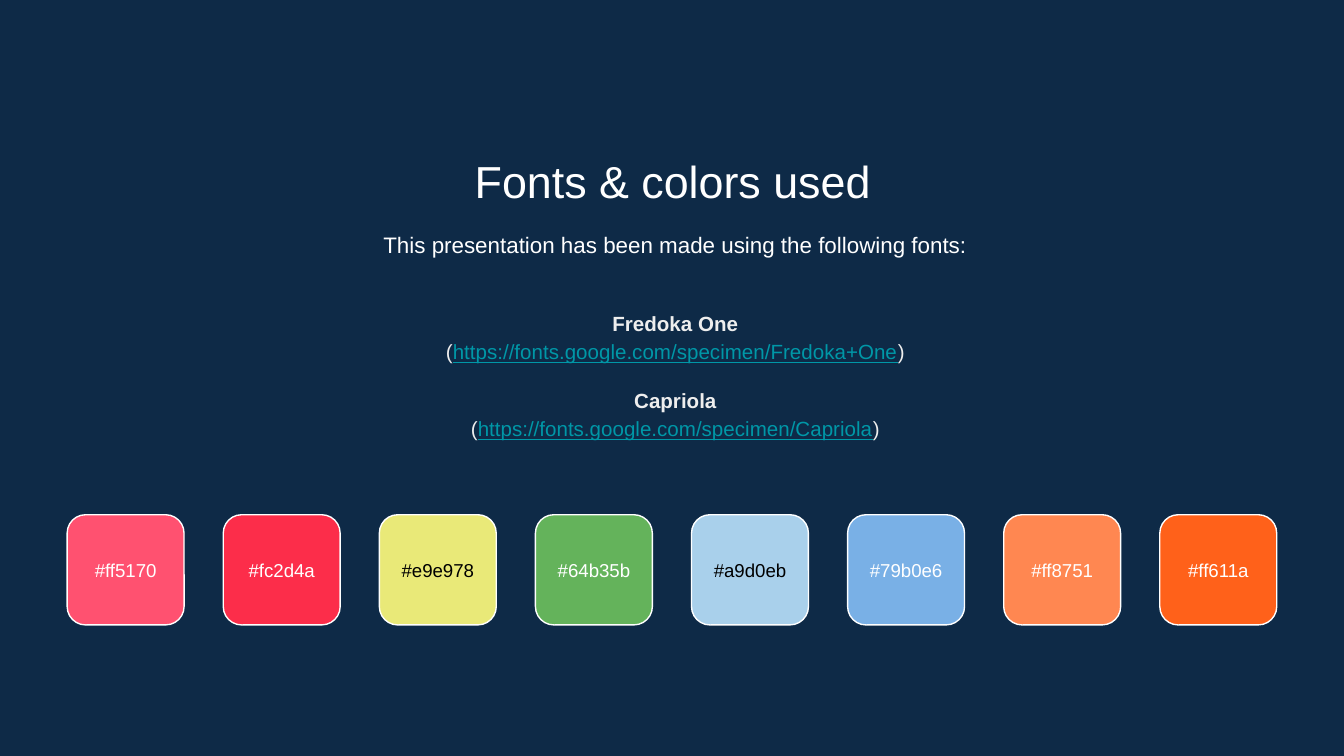
from dataclasses import dataclass

from pptx import Presentation
from pptx.dml.color import RGBColor
from pptx.enum.shapes import MSO_SHAPE
from pptx.enum.text import MSO_ANCHOR, PP_ALIGN
from pptx.util import Inches, Pt


@dataclass(frozen=True)
class Theme:
    font: str = "Arial"
    background: str = "0E2A47"
    white: str = "FFFFFF"
    black: str = "000000"
    soft_white: str = "EEEEEE"
    link: str = "0097A7"
    title_size: float = 24
    intro_size: float = 12
    body_size: float = 11
    label_size: float = 10


THEME = Theme()
FONTS = [
    ("Fredoka One", "https://fonts.google.com/specimen/Fredoka+One"),
    ("Capriola", "https://fonts.google.com/specimen/Capriola"),
]
# Swatch colour and the colour of its label
SWATCHES = [
    ("ff5170", THEME.white),
    ("fc2d4a", THEME.white),
    ("e9e978", THEME.black),
    ("64b35b", THEME.white),
    ("a9d0eb", THEME.black),
    ("79b0e6", THEME.white),
    ("ff8751", THEME.white),
    ("ff611a", THEME.white),
]
SLIDE_WIDTH, MARGIN = 10, 0.5
SWATCH_TOP, SWATCH_WIDTH, SWATCH_HEIGHT = 3.83, 0.87, 0.82
# Equal steps from the left margin to the right one
SWATCH_PITCH = (SLIDE_WIDTH - 2 * MARGIN - SWATCH_WIDTH) / (len(SWATCHES) - 1)
LABEL_TOP, LABEL_HEIGHT = 4, 0.48


def color(value):
    return RGBColor.from_string(value.upper())


def add_run(paragraph, text, *, size, fill, bold=False, underline=False):
    run = paragraph.add_run()
    run.text = text
    run.font.name = THEME.font
    run.font.size = Pt(size)
    run.font.bold = bold
    run.font.underline = underline
    run.font.color.rgb = color(fill)


def prepare_frame(shape, anchor):
    frame = shape.text_frame
    frame.word_wrap = True
    frame.vertical_anchor = anchor
    frame.margin_left = frame.margin_right = Inches(0.1)
    frame.margin_top = frame.margin_bottom = Inches(0.1)
    return frame


def format_paragraph(paragraph, line_spacing=1.0, space_before=0):
    paragraph.alignment = PP_ALIGN.CENTER
    paragraph.line_spacing = line_spacing
    paragraph.space_before = Pt(space_before)


def add_text(slide, text, left, top, width, height, *, size, fill,
             anchor=MSO_ANCHOR.TOP, line_spacing=1.0):
    box = slide.shapes.add_textbox(
        Inches(left), Inches(top), Inches(width), Inches(height))
    paragraph = prepare_frame(box, anchor).paragraphs[0]
    format_paragraph(paragraph, line_spacing)
    add_run(paragraph, text, size=size, fill=fill)


def set_title(slide, text):
    title = slide.shapes.title
    title.left, title.top = Inches(1.15), Inches(1.04)
    title.width, title.height = Inches(7.71), Inches(0.53)
    paragraph = prepare_frame(title, MSO_ANCHOR.TOP).paragraphs[0]
    format_paragraph(paragraph)
    add_run(paragraph, text, size=THEME.title_size, fill=THEME.white)


def add_font_list(slide):
    box = slide.shapes.add_textbox(
        Inches(1.17), Inches(2.1), Inches(7.71), Inches(1.37))
    frame = prepare_frame(box, MSO_ANCHOR.MIDDLE)
    size = THEME.body_size
    for index, (name, address) in enumerate(FONTS):
        heading = frame.add_paragraph() if index else frame.paragraphs[0]
        format_paragraph(heading, 1.15, 11 if index else 0)
        add_run(heading, name, size=size, fill=THEME.soft_white, bold=True)

        source = frame.add_paragraph()
        format_paragraph(source, 1.15)
        add_run(source, "(", size=size, fill=THEME.soft_white)
        add_run(source, address, size=size, fill=THEME.link, underline=True)
        add_run(source, ")", size=size, fill=THEME.soft_white)


def add_swatch(slide, left, fill, label_fill):
    swatch = slide.shapes.add_shape(
        MSO_SHAPE.ROUNDED_RECTANGLE, Inches(left), Inches(SWATCH_TOP),
        Inches(SWATCH_WIDTH), Inches(SWATCH_HEIGHT))
    swatch.shadow.inherit = False
    swatch.fill.solid()
    swatch.fill.fore_color.rgb = color(fill)
    swatch.line.color.rgb = color(THEME.white)
    swatch.line.width = Pt(0.75)
    add_text(slide, f"#{fill}", left, LABEL_TOP, SWATCH_WIDTH, LABEL_HEIGHT,
             size=THEME.label_size, fill=label_fill, anchor=MSO_ANCHOR.MIDDLE)


def main():
    presentation = Presentation()
    # Widescreen, 16 to 9
    presentation.slide_width = Inches(SLIDE_WIDTH)
    presentation.slide_height = Inches(SLIDE_WIDTH * 9 / 16)
    slide = presentation.slides.add_slide(presentation.slide_layouts[5])
    slide.background.fill.solid()
    slide.background.fill.fore_color.rgb = color(THEME.background)

    # Title and introduction
    set_title(slide, "Fonts & colors used")
    add_text(slide, "This presentation has been made using the following fonts:",
             1.17, 1.59, 7.71, 0.48, size=THEME.intro_size, fill=THEME.white,
             line_spacing=1.15)

    # Fonts and where to find them
    add_font_list(slide)

    # Row of colour swatches
    for index, (fill, label_fill) in enumerate(SWATCHES):
        add_swatch(slide, MARGIN + index * SWATCH_PITCH, fill, label_fill)

    presentation.save("out.pptx")


if __name__ == "__main__":
    main()
